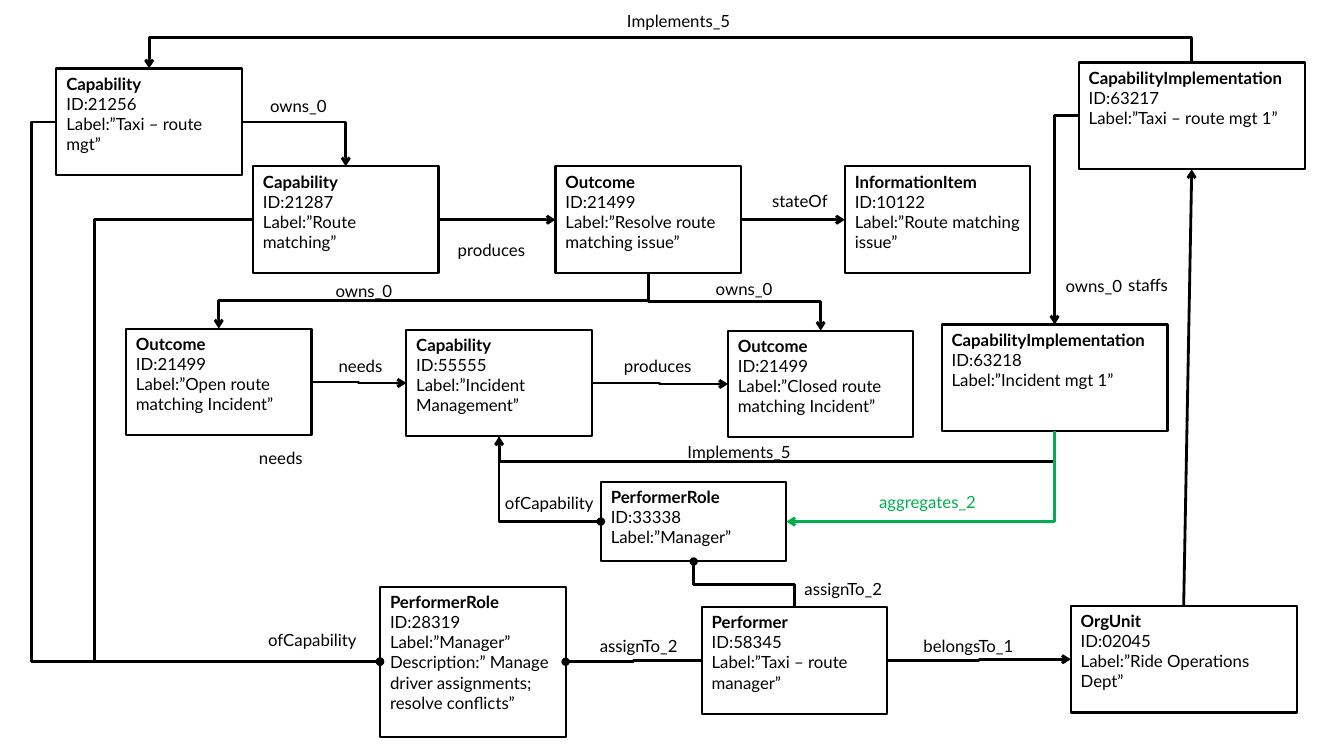
import pptx
import pptx.util
import pptx.dml.color
import pptx.enum.shapes
import pptx.enum.text
import pptx.oxml.ns
import lxml.etree

INCH = pptx.util.Inches
BLACK, GREEN, WHITE = "000000", "00B050", "FFFFFF"
NARROW, WIDE = 1.84, 2.24
TOP, LEFT, BOTTOM, RIGHT = range(4)

deck = pptx.Presentation()
deck.slide_width, deck.slide_height = INCH(13.33), INCH(7.5)
page = deck.slides.add_slide(deck.slide_layouts[6])


def color(value):
    return pptx.dml.color.RGBColor.from_string(value)


def write(frame, lines, ink=BLACK, bold_first=False):
    """Fill a text frame with one left-aligned paragraph per line."""
    frame.word_wrap = True
    frame.vertical_anchor = pptx.enum.text.MSO_ANCHOR.TOP
    for index, line in enumerate(lines):
        para = frame.paragraphs[0] if index == 0 else frame.add_paragraph()
        para.alignment = pptx.enum.text.PP_ALIGN.LEFT
        span = para.add_run()
        span.text = line
        span.font.name, span.font.size = "Lato", pptx.util.Pt(12)
        span.font.bold = bold_first and index == 0
        span.font.color.rgb = color(ink)


# Entity boxes: key, left, top, width, height, lines
entities = [
    ("taxi route", 0.56, 0.68, NARROW, 1.06,
     ["Capability", "ID:21256", "Label:”Taxi – route mgt”"]),
    ("taxi implementation", 10.7, 0.62, WIDE, 1.06,
     ["CapabilityImplementation", "ID:63217", "Label:”Taxi – route mgt 1”"]),
    ("route matching", 2.51, 1.65, NARROW, 1.06,
     ["Capability", "ID:21287", "Label:”Route matching”"]),
    ("resolve issue", 5.51, 1.65, NARROW, 1.06,
     ["Outcome", "ID:21499", "Label:”Resolve route matching issue”"]),
    ("information", 8.38, 1.65, NARROW, 1.06,
     ["InformationItem", "ID:10122", "Label:”Route matching issue”"]),
    ("open incident", 1.25, 3.26, NARROW, 1.06,
     ["Outcome", "ID:21499", "Label:”Open route matching Incident”"]),
    ("incident management", 4.03, 3.27, NARROW, 1.06,
     ["Capability", "ID:55555", "Label:”Incident Management”"]),
    ("closed incident", 7.22, 3.28, NARROW, 1.06,
     ["Outcome", "ID:21499", "Label:”Closed route matching Incident”"]),
    ("incident implementation", 9.34, 3.22, WIDE, 1.06,
     ["CapabilityImplementation", "ID:63218", "Label:”Incident mgt 1”"]),
    ("incident role", 5.96, 4.78, NARROW, 0.79,
     ["PerformerRole", "ID:33338", "Label:”Manager”"]),
    ("driver role", 3.77, 5.82, NARROW, 1.49,
     ["PerformerRole", "ID:28319", "Label:”Manager”",
      "Description:” Manage driver assignments; resolve conflicts”"]),
    ("performer", 6.96, 6.02, NARROW, 1.06,
     ["Performer", "ID:58345", "Label:”Taxi – route manager”"]),
    ("organisation", 10.62, 6.01, WIDE, 1.06,
     ["OrgUnit", "ID:02045", "Label:”Ride Operations Dept”"]),
]
boxes = {}
for key, left, top, width, height, lines in entities:
    box = page.shapes.add_shape(pptx.enum.shapes.MSO_SHAPE.RECTANGLE,
                                INCH(left), INCH(top), INCH(width), INCH(height))
    box.shadow.inherit = False
    box.fill.solid()
    box.fill.fore_color.rgb = color(WHITE)
    box.line.color.rgb = color(BLACK)
    box.line.width = pptx.util.Pt(1.5)
    write(box.text_frame, lines, bold_first=True)
    boxes[key] = box

# Relations: marked box and side, other box and side, marker, bend position, colour
relations = [
    ("taxi route", TOP, "taxi implementation", TOP, "arrow", 0.37, BLACK),
    ("taxi implementation", BOTTOM, "organisation", TOP, "arrow", "straight", BLACK),
    ("driver role", LEFT, "taxi route", LEFT, "oval", 0.31, BLACK),
    ("driver role", LEFT, "route matching", LEFT, "oval", 0.94, BLACK),
    ("driver role", RIGHT, "performer", LEFT, "oval", None, BLACK),
    ("organisation", LEFT, "performer", RIGHT, "arrow", None, BLACK),
    ("route matching", TOP, "taxi route", RIGHT, "arrow", None, BLACK),
    ("resolve issue", LEFT, "route matching", RIGHT, "arrow", None, BLACK),
    ("information", LEFT, "resolve issue", RIGHT, "arrow", None, BLACK),
    ("incident management", LEFT, "open incident", RIGHT, "arrow", None, BLACK),
    ("closed incident", LEFT, "incident management", RIGHT, "arrow", None, BLACK),
    ("closed incident", TOP, "resolve issue", BOTTOM, "arrow", None, BLACK),
    ("open incident", TOP, "resolve issue", BOTTOM, "arrow", None, BLACK),
    ("incident implementation", TOP, "taxi implementation", LEFT, "arrow", None, BLACK),
    ("incident management", BOTTOM, "incident implementation", BOTTOM, "arrow", 4.58, BLACK),
    ("incident role", LEFT, "incident management", BOTTOM, "oval", None, BLACK),
    ("incident role", BOTTOM, "performer", TOP, "oval", None, BLACK),
    ("incident role", RIGHT, "incident implementation", BOTTOM, "arrow", None, GREEN),
]
kinds = pptx.enum.shapes.MSO_CONNECTOR
qn = pptx.oxml.ns.qn
for start, start_side, end, end_side, marker, bend, ink in relations:
    straight = bend == "straight"
    link = page.shapes.add_connector(kinds.STRAIGHT if straight else kinds.ELBOW, 0, 0, 0, 0)
    link.begin_connect(boxes[start], start_side)
    link.end_connect(boxes[end], end_side)
    link.line.color.rgb = color(ink)
    link.line.width = pptx.util.Pt(2)
    properties = link.element.spPr
    lxml.etree.SubElement(link.line._get_or_add_ln(), qn("a:headEnd"), type=marker)
    lxml.etree.SubElement(properties, qn("a:effectLst"))
    if straight:
        continue

    x1, y1, x2, y2 = link.begin_x, link.begin_y, link.end_x, link.end_y
    upright = start_side in (TOP, BOTTOM)
    geometry = properties.find(qn("a:prstGeom"))
    if upright != (end_side in (TOP, BOTTOM)):
        geometry.set("prst", "bentConnector2")
    elif bend is not None:
        first, last = (y1, y2) if upright else (x1, x2)
        share = round((INCH(bend) - first) / (last - first) * 100000)
        guides = geometry.find(qn("a:avLst"))
        lxml.etree.SubElement(guides, qn("a:gd"), name="adj1", fmla=f"val {share}")

    # A path that leaves vertically is a horizontal one turned by 90 degrees
    if upright:
        across, down = abs(x2 - x1), abs(y2 - y1)
        link.left = (x1 + x2 - down) // 2
        link.top = (y1 + y2 - across) // 2
        link.width, link.height = down, across
        frame = properties.find(qn("a:xfrm"))
        frame.set("rot", "5400000")
        frame.set("flipH", str(int(y2 < y1)))
        frame.set("flipV", str(int(x2 > x1)))

# Relation labels: text, left, top, colour
labels = [
    ("Implements_5", 6.12, 0.06, BLACK), ("owns_0", 2.58, 0.9, BLACK),
    ("produces", 4.44, 2.33, BLACK), ("stateOf", 7.56, 1.84, BLACK),
    ("owns_0", 3.23, 2.74, BLACK), ("owns_0", 7, 2.72, BLACK),
    ("owns_0", 10.47, 2.69, BLACK), ("staffs", 11.09, 2.68, BLACK),
    ("needs", 3.26, 3.48, BLACK), ("produces", 6.09, 3.48, BLACK),
    ("needs", 2.47, 4.39, BLACK), ("Implements_5", 6.72, 4.33, BLACK),
    ("ofCapability", 4.91, 4.84, BLACK), ("aggregates_2", 8.62, 4.83, GREEN),
    ("assignTo_2", 7.88, 5.69, BLACK), ("ofCapability", 2.56, 6.2, BLACK),
    ("assignTo_2", 5.85, 6.26, BLACK), ("belongsTo_1", 9.06, 6.26, BLACK),
]
for text, left, top, ink in labels:
    label = page.shapes.add_textbox(INCH(left), INCH(top), INCH(1.25), INCH(0.3))
    write(label.text_frame, [text], ink)

deck.save("out.pptx")
